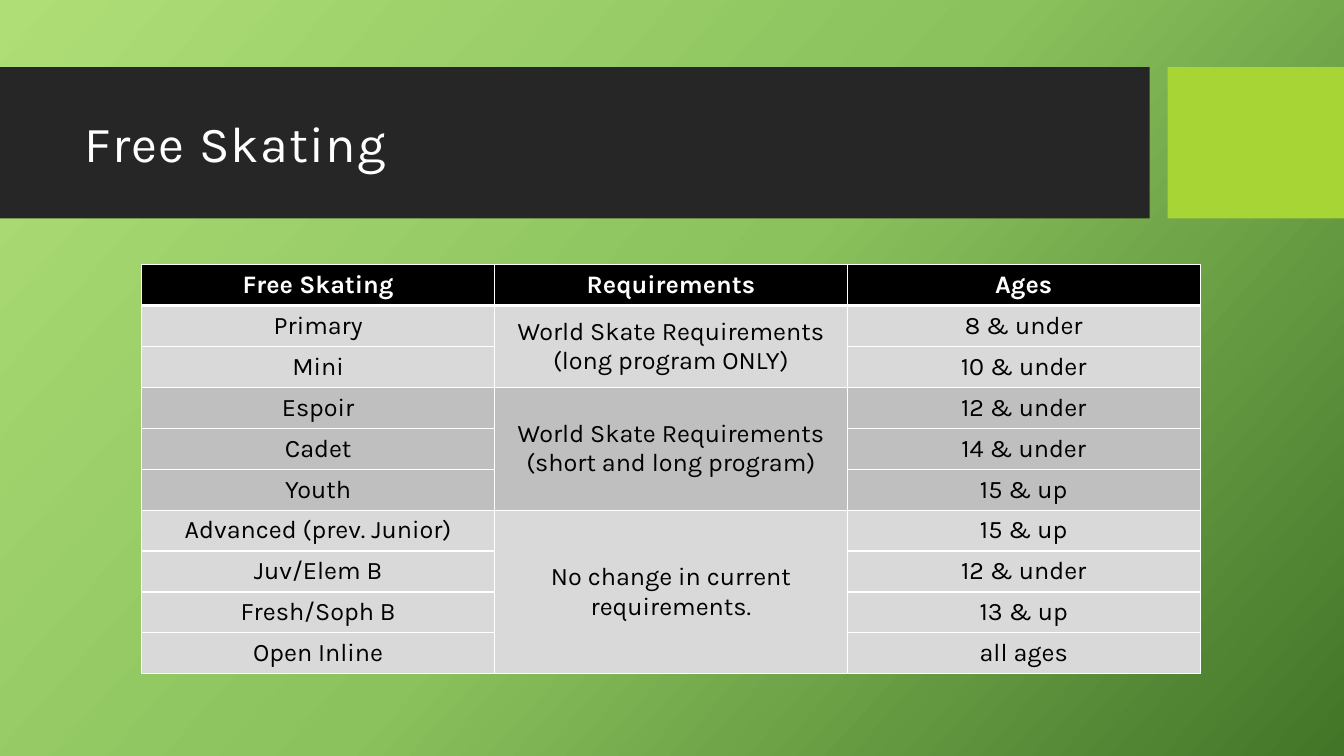
import copy

import pptx
import pptx.dml.color
import pptx.enum.shapes
import pptx.enum.text
import pptx.oxml
import pptx.oxml.ns
import pptx.util

PX = 9525
FONT = "Karla"
MID = pptx.enum.text.MSO_ANCHOR.MIDDLE


def rgb(text):
    return pptx.dml.color.RGBColor.from_string(text)


def edge(cell, sides):
    """Draw white cell borders; sides maps L, R, T, B to a width in points."""
    props = cell._tc.get_or_add_tcPr()
    for spot, side in enumerate("LRTB"):
        props.insert(spot, pptx.oxml.parse_xml(
            f'<a:ln{side} {pptx.oxml.ns.nsdecls("a")} w="{sides[side] * 12700}">'
            '<a:solidFill><a:srgbClr val="FFFFFF"/></a:solidFill>'
            f'</a:ln{side}>'))


deck = pptx.Presentation()
deck.slide_width, deck.slide_height = 1280 * PX, 720 * PX
slide = deck.slides.add_slide(deck.slide_layouts[5])

# Background gradient
back = slide.background.fill
back.gradient()
back.gradient_angle = 318
stops = slide.element.find(".//" + pptx.oxml.ns.qn("a:gsLst"))
stops.append(copy.deepcopy(stops[-1]))
shades = [(0, "AFDE77"), (0.5, "8BC25D"), (1, "437528")]
for stop, (place, hue) in zip(back.gradient_stops, shades):
    stop.position = place
    stop.color.rgb = rgb(hue)

# Title band
for left, width, hue in [(0, 1095, "262626"), (1112, 168, "A7D535")]:
    band = slide.shapes.add_shape(
        pptx.enum.shapes.MSO_SHAPE.RECTANGLE,
        left * PX, 64 * PX, width * PX, 144 * PX)
    band.shadow.inherit = False
    band.fill.solid()
    band.fill.fore_color.rgb = rgb(hue)
    band.line.fill.background()

title = slide.shapes.title
title.left, title.top, title.width, title.height = (
    71 * PX, 79 * PX, 1009 * PX, 113 * PX)
slide.shapes._spTree.append(title._element)  # in front of the band
title.text_frame.text = "Free Skating"
title.text_frame.vertical_anchor = MID
head = title.text_frame.paragraphs[0]
head.alignment = pptx.enum.text.PP_ALIGN.LEFT
head.font.name = FONT
head.font.size = pptx.util.Pt(36)
head.font.color.rgb = rgb("FFFFFF")
head.runs[0]._r.get_or_add_rPr().set("spc", "90")

# Each group shares one requirement and one fill
groups = [
    ("Requirements", "000000", [("Free Skating", "Ages")]),
    ("World Skate Requirements (long program ONLY)", "D9D9D9",
     [("Primary", "8 & under"), ("Mini", "10 & under")]),
    ("World Skate Requirements (short and long program)", "BFBFBF",
     [("Espoir", "12 & under"), ("Cadet", "14 & under"), ("Youth", "15 & up")]),
    ("No change in current requirements.", "D9D9D9",
     [("Advanced (prev. Junior)", "15 & up"), ("Juv/Elem B", "12 & under"),
      ("Fresh/Soph B", "13 & up"), ("Open Inline", "all ages")]),
]
count = sum(len(levels) for _, _, levels in groups)
table = slide.shapes.add_table(
    count, 3, 135 * PX, 252 * PX, 1008 * PX, count * 39 * PX).table
table.first_row = table.horz_banding = False
for col in table.columns:
    col.width = 336 * PX

row = 0
for need, hue, levels in groups:
    first = row
    for level, ages in levels:
        table.rows[row].height = 39 * PX
        words = (level, need if row == first else "", ages)
        for col, text in enumerate(words):
            cell = table.cell(row, col)
            cell.text = text
            cell.vertical_anchor = MID
            cell.fill.solid()
            cell.fill.fore_color.rgb = rgb(hue)
            edge(cell, {"L": 1, "R": 1, "T": 3 if row == 1 else 1,
                        "B": 3 if row == 0 else 1})
            para = cell.text_frame.paragraphs[0]
            para.alignment = pptx.enum.text.PP_ALIGN.CENTER
            para.font.name = FONT
            para.font.size = pptx.util.Pt(18)
            para.font.bold = row == 0
            para.font.color.rgb = rgb("FFFFFF" if row == 0 else "000000")
        row += 1
    if len(levels) > 1:
        table.cell(first, 1).merge(table.cell(row - 1, 1))

deck.save("out.pptx")
